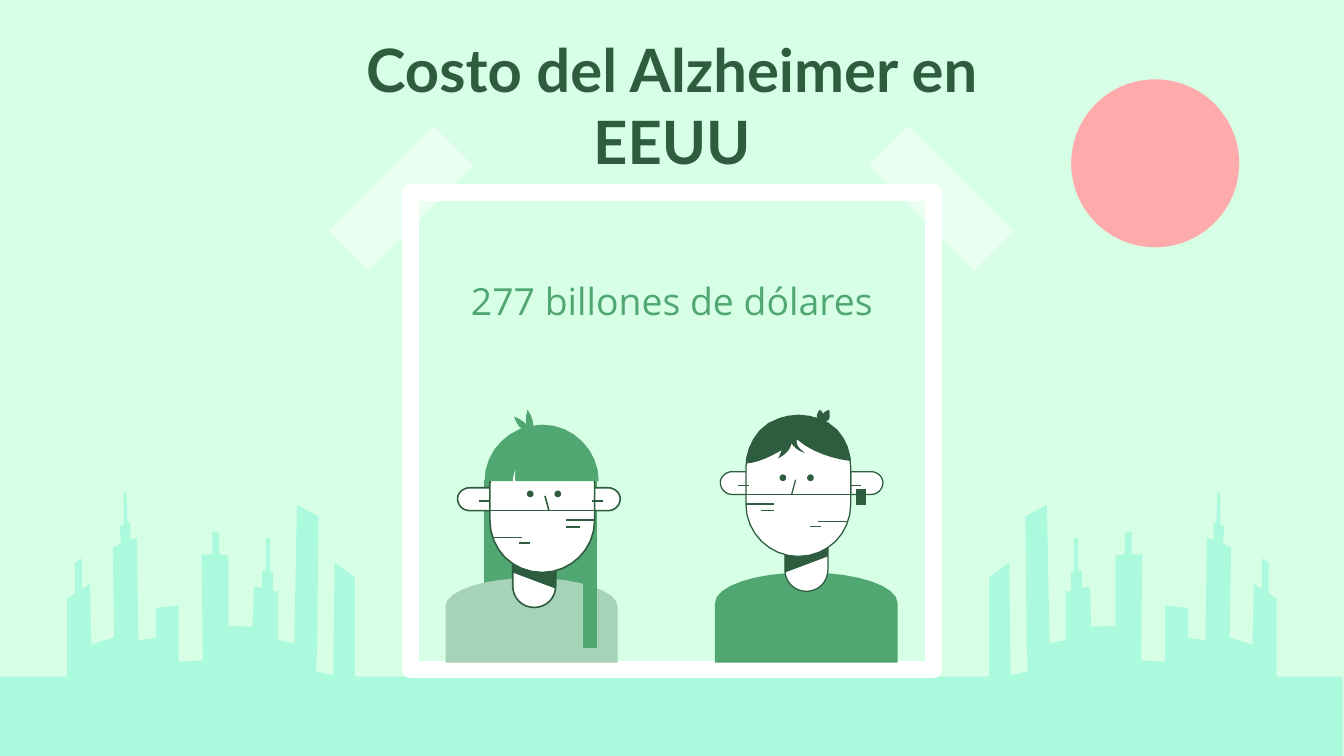
from dataclasses import dataclass

from lxml import etree
from pptx import Presentation, util as u
from pptx.dml.color import RGBColor
from pptx.enum import shapes, text
from pptx.oxml.ns import qn


@dataclass(frozen=True)
class Theme:
    paper: str = "D6FFE6"
    city: str = "ABFADD"
    sun: str = "FFABAB"
    white: str = "FFFFFF"
    ink: str = "2D5C3F"
    green: str = "50A772"
    sage: str = "A6D3B8"
    title_font: str = "Lato"
    body_font: str = "Open Sans"
    title_size: int = 32
    body_size: int = 20
    frame_line: float = 9


THEME = Theme()
CELL = u.Inches(0.01)  # the slide is a 16:9 grid, 1000 columns wide
COLUMNS = 1000
ROWS = COLUMNS * 9 / 16
CURVE_STEPS = 8


@dataclass(frozen=True)
class Area:
    """A grid origin; side -1 mirrors the columns."""
    column: float
    row: float
    side: int = 1

    def point(self, column, row):
        return (round((self.column + self.side * column) * CELL),
                round((self.row + row) * CELL))

    def box(self, column, row, width, height):
        left = column if self.side == 1 else column + width
        return (*self.point(left, row), round(width * CELL), round(height * CELL))


SLIDE = Area(0, 0)

SKYLINE = """M 44 0 L 42 2 42 25 39 26 40 39 34 42 35 109 18 114 17 69 11 73 11 50
6 53 6 76 0 80 0 197 214 197 214 64 199 53 198 137 185 134 186 117 187 19 171 10
169 113 157 111 157 75 153 74 153 60 151 60 151 35 148 35 148 59 145 59 145 72
139 71 138 101 120 100 120 48 113 47 113 31 108 30 108 47 100 47 101 126 83 127
83 85 66 87 66 109 53 111 52 35 47 36 47 23 45 24"""

# Portrait outlines, measured from the top middle of the head
NEAR_EAR = "M 54 42 C 59 42 63 46 63 50 C 63 55 59 59 54 59 L 39 59 39 42"
FAR_EAR = "M -37 42 L -37 59 -49 59 C -54 59 -58 55 -58 50 C -58 46 -54 42 -49 42"
NECK = "M 22 89 L 22 115 C 22 124 15 131 6 131 C -3 131 -10 124 -10 115 L -10 89"
NECK_SHADE = "M 22 89 L 22 105 -10 117 -10 89"
HEAD = """M 0 0 C 22 0 39 17 39 39 L 39 66 C 39 88 22 105 0 105
C -21 105 -39 88 -39 66 L -39 39 C -39 17 -21 0 0 0"""
EYES = [(6.5, 44), (-14, 44)]
STROKES = [(39, 52, 47, 52), (-37, 52, -45, 52), (-39, 59, 39, 59), (-2, 48, -5, 59),
           (-39, 66, -18, 66), (-28, 71, -18, 71), (37, 79, 15, 79), (9, 83, 17, 83)]

MAN_BODY = "M 6 117 C 44 117 74 127 74 140 L 74 184 -62 184 -62 140 C -62 127 -32 117 6 117"
MAN_DETAILS = [
    """M 0 0 C 38 0 39 34 39 34 C 39 34 15 32 -1 18 C -1 18 -3 23 5 28
    C 5 28 -1 27 -5 21 C -12 26 -26 35 -39 36 C -39 36 -38 0 0 0""",
    "M -5 21 C -5 21 -6 28 -15 32 C -15 32 -10 24 -14 21",
    "M 23 -4 C 23 -4 24 0 23 3 C 21 5 18 6 18 6 C 18 6 16 3 18 0 C 19 -3 23 -4 23 -4",
    "M 16 -4 C 16 -4 19 -2 19 1 C 20 4 17 7 17 7 C 17 7 14 5 14 2 C 13 -1 16 -4 16 -4",
    "M 43 55 L 50 55 50 67 43 67",
]
WOMAN_BODY = "M 8 109 C -27 109 -56 119 -56 130 L -56 172 72 172 72 130 C 72 119 44 109 8 109"
WOMAN_BACK_HAIR = "M -41 36 L -41 149 43 149 43 36"
WOMAN_DETAILS = [
    """M 0 -5 C -23 -5 -42 14 -42 37 L 20 37 C 20 37 21 32 19 26
    C 19 26 22 33 22 37 L 43 37 C 43 14 24 -5 0 -5""",
    "M 11 -16 C 11 -16 4 -7 8 0 C 8 0 15 -3 11 -16",
    "M 21 -11 C 21 -11 10 -7 9 0 C 9 0 9 0 10 0 C 12 0 18 -1 21 -11",
    "M -41 107 L -41 161 -30 161 -30 107",
]


def color(value):
    return RGBColor.from_string(value)


def paint(shape, fill=None, line=None, width=1.0):
    shape.shadow.inherit = False
    if fill:
        shape.fill.solid()
        shape.fill.fore_color.rgb = color(fill)
    else:
        shape.fill.background()
    if line:
        shape.line.color.rgb = color(line)
        shape.line.width = u.Pt(width)
    else:
        shape.line.fill.background()
    return shape


def preset(page, kind, box, **style):
    return paint(page.shapes.add_shape(kind, *box), **style)


def trace(outline):
    """Turn an outline of M, L and C commands into grid points."""
    points, command, numbers = [], "", []
    for token in outline.split():
        if token.isalpha():
            command = token
            continue
        numbers.append(float(token))
        if len(numbers) < (6 if command == "C" else 2):
            continue
        pairs = list(zip(numbers[::2], numbers[1::2]))
        if command == "C":
            a, b, c, d = points[-1], *pairs
            for step in range(1, CURVE_STEPS + 1):
                t = step / CURVE_STEPS
                s = 1 - t
                points.append(tuple(
                    s**3 * a[i] + 3 * s * s * t * b[i] + 3 * s * t * t * c[i] + t**3 * d[i]
                    for i in (0, 1)))
        else:
            points += pairs
        numbers = []
    return points


def draw(page, area, outline, **style):
    first, *others = [area.point(*point) for point in trace(outline)]
    builder = page.shapes.build_freeform(*first)
    builder.add_line_segments(others, close=True)
    return paint(builder.convert_to_shape(), **style)


def stroke(page, area, ends, width):
    line = page.shapes.add_connector(
        shapes.MSO_CONNECTOR.STRAIGHT, *area.point(*ends[:2]), *area.point(*ends[2:]))
    line.line.color.rgb = color(THEME.ink)
    line.line.width = u.Pt(width)
    etree.SubElement(line._element.spPr, qn("a:effectLst"))


def add_scenery(page):
    page.background.fill.solid()
    page.background.fill.fore_color.rgb = color(THEME.paper)
    preset(page, shapes.MSO_SHAPE.RECTANGLE, SLIDE.box(-1, 503.5, COLUMNS, 59),
           fill=THEME.city)
    for area in (Area(50, 365.5), Area(COLUMNS - 50, 365.5, -1)):
        draw(page, area, SKYLINE, fill=THEME.city)
    preset(page, shapes.MSO_SHAPE.OVAL, SLIDE.box(797, 59, 125, 125), fill=THEME.sun)


def add_frame(page, area, width, height):
    """A white frame held by two strips of translucent tape."""
    frame = preset(page, shapes.MSO_SHAPE.RECTANGLE, area.box(0, 0, width, height),
                   line=THEME.white, width=THEME.frame_line)
    etree.SubElement(frame.line._get_or_add_ln(), qn("a:round"))
    for column, angle in ((-28, 45), (width - 15, 315)):
        tape = preset(page, shapes.MSO_SHAPE.RECTANGLE, area.box(column, -51, 42, 110),
                      fill=THEME.white)
        tape.rotation = angle
        tint = tape._element.spPr.find(qn("a:solidFill"))[0]
        etree.SubElement(tint, qn("a:alpha"), val="46000")


def add_portrait(page, area, body, body_fill, details, hair, width, back_hair=None):
    if back_hair:
        draw(page, area, back_hair, fill=hair)
    outlined = dict(fill=THEME.white, line=THEME.ink, width=width)
    for ear in (NEAR_EAR, FAR_EAR):
        draw(page, area, ear, **outlined)
    draw(page, area, body, fill=body_fill)
    draw(page, area, NECK, **outlined)
    draw(page, area, NECK_SHADE, fill=THEME.ink)
    draw(page, area, HEAD, **outlined)
    for eye in EYES:
        preset(page, shapes.MSO_SHAPE.OVAL, area.box(*eye, 5, 5), fill=THEME.ink)
    for ends in STROKES:
        stroke(page, area, ends, width)
    for detail in details:
        draw(page, area, detail, fill=hair)


def write(shape, box, words, font, size, ink, bold=False):
    shape.left, shape.top, shape.width, shape.height = box
    frame = shape.text_frame
    frame.word_wrap = True
    frame.auto_size = text.MSO_AUTO_SIZE.NONE
    frame.vertical_anchor = text.MSO_ANCHOR.MIDDLE
    frame.margin_left = frame.margin_right = u.Inches(0.1)
    frame.margin_top = frame.margin_bottom = u.Inches(0.1)
    para = frame.paragraphs[0]
    para.text = words
    para.alignment = text.PP_ALIGN.CENTER
    para.font.name, para.font.size, para.font.bold = font, u.Pt(size), bold
    para.font.color.rgb = color(ink)


def main():
    deck = Presentation()
    deck.slide_width, deck.slide_height = COLUMNS * CELL, round(ROWS * CELL)
    page = deck.slides.add_slide(deck.slide_layouts[5])
    add_scenery(page)
    add_frame(page, Area(305.5, 143.5), 389, 355)
    add_portrait(page, Area(594, 309), MAN_BODY, THEME.green, MAN_DETAILS, THEME.ink, 0.69)
    add_portrait(page, Area(403.5, 321, -1), WOMAN_BODY, THEME.sage, WOMAN_DETAILS,
                 THEME.green, 0.85, WOMAN_BACK_HAIR)
    amount_box = SLIDE.box(337.5, 191, 325, 66)
    write(page.shapes.add_textbox(*amount_box), amount_box, "277 billones de dólares",
          THEME.body_font, THEME.body_size, THEME.green)
    write(page.shapes.title, SLIDE.box(251, 46.5, 498, 63), "Costo del Alzheimer en EEUU",
          THEME.title_font, THEME.title_size, THEME.ink, bold=True)
    deck.save("out.pptx")


if __name__ == "__main__":
    main()
